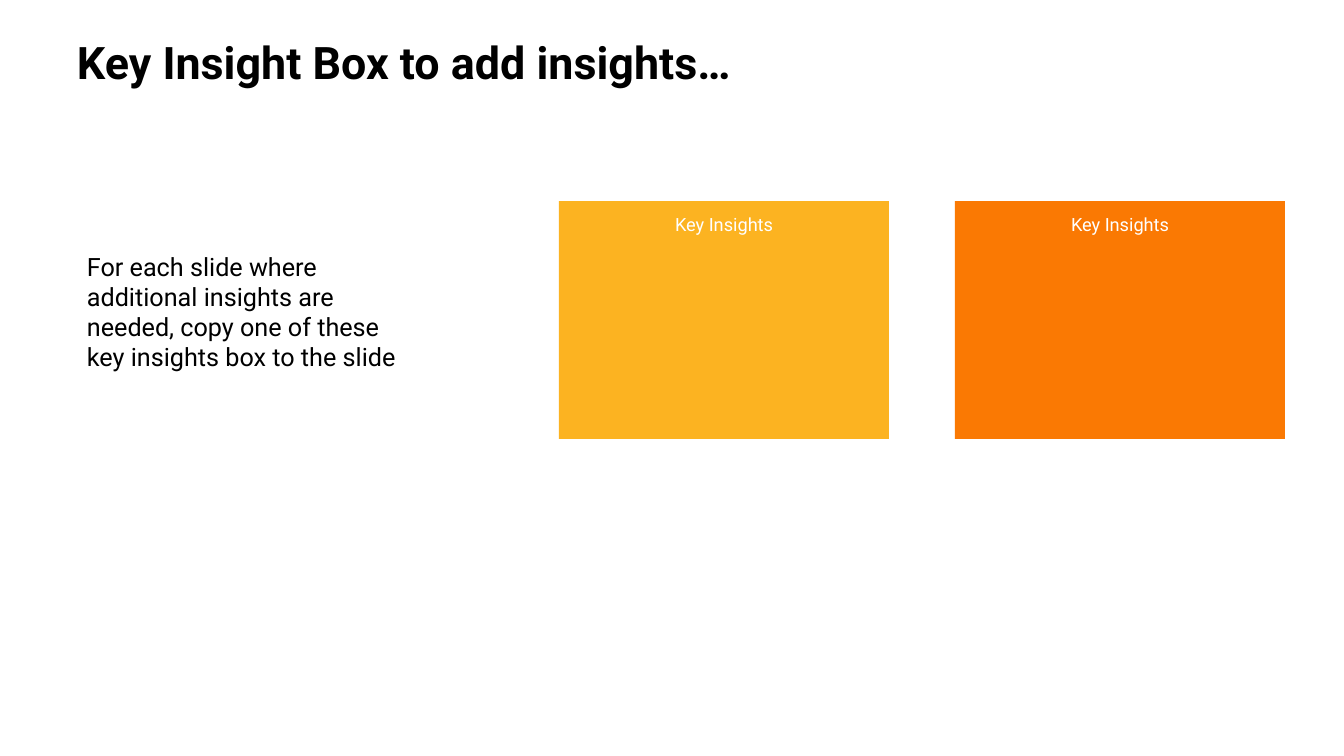
import pptx
import pptx.dml.color
import pptx.enum.shapes
import pptx.enum.text
import pptx.util

PX = 9144000 / 1008  # EMU per px, at 100.8 px to the inch
FONT = "Roboto"
COLORS = {"black": "000000", "white": "FFFFFF", "amber": "FCB321", "orange": "FA7903"}


def px(*lengths):
    return [round(length * PX) for length in lengths]


def write(frame, text, size, color, align, bold=False):
    """Fill a text frame with one formatted, top-anchored paragraph."""
    frame.word_wrap = True
    frame.auto_size = pptx.enum.text.MSO_AUTO_SIZE.NONE
    frame.vertical_anchor = pptx.enum.text.MSO_ANCHOR.TOP
    frame.text = text
    paragraph = frame.paragraphs[0]
    paragraph.alignment = align
    paragraph.font.name = FONT
    paragraph.font.size = pptx.util.Pt(size)
    paragraph.font.bold = bold
    paragraph.font.color.rgb = pptx.dml.color.RGBColor.from_string(COLORS[color])


LEFT = pptx.enum.text.PP_ALIGN.LEFT
CENTER = pptx.enum.text.PP_ALIGN.CENTER

deck = pptx.Presentation()
deck.slide_width, deck.slide_height = px(1344, 756)
slide = deck.slides.add_slide(deck.slide_layouts[5])

title = slide.shapes.title
title.left, title.top, title.width, title.height = px(77, 41, 1190, 68)
heading = title.text_frame
heading.margin_left = heading.margin_top = heading.margin_right = heading.margin_bottom = 0
write(heading, "Key Insight Box to add insights…", 32, "black", LEFT, bold=True)
heading.paragraphs[0].line_spacing = 0.9

for column, color in enumerate(["amber", "orange"]):
    insight_box = slide.shapes.add_shape(
        pptx.enum.shapes.MSO_SHAPE.RECTANGLE, *px(559 + 396 * column, 201, 330, 238))
    insight_box.shadow.inherit = False
    insight_box.fill.solid()
    insight_box.fill.fore_color.rgb = pptx.dml.color.RGBColor.from_string(COLORS[color])
    insight_box.line.fill.background()
    write(insight_box.text_frame, "Key Insights", 13, "white", CENTER)
    insight_box.text_frame.margin_top = px(12)[0]

instruction = slide.shapes.add_textbox(*px(77, 246, 343, 132))
write(instruction.text_frame,
      "For each slide where additional insights are needed, "
      "copy one of these key insights box to the slide",
      18, "black", LEFT)

deck.save("out.pptx")
